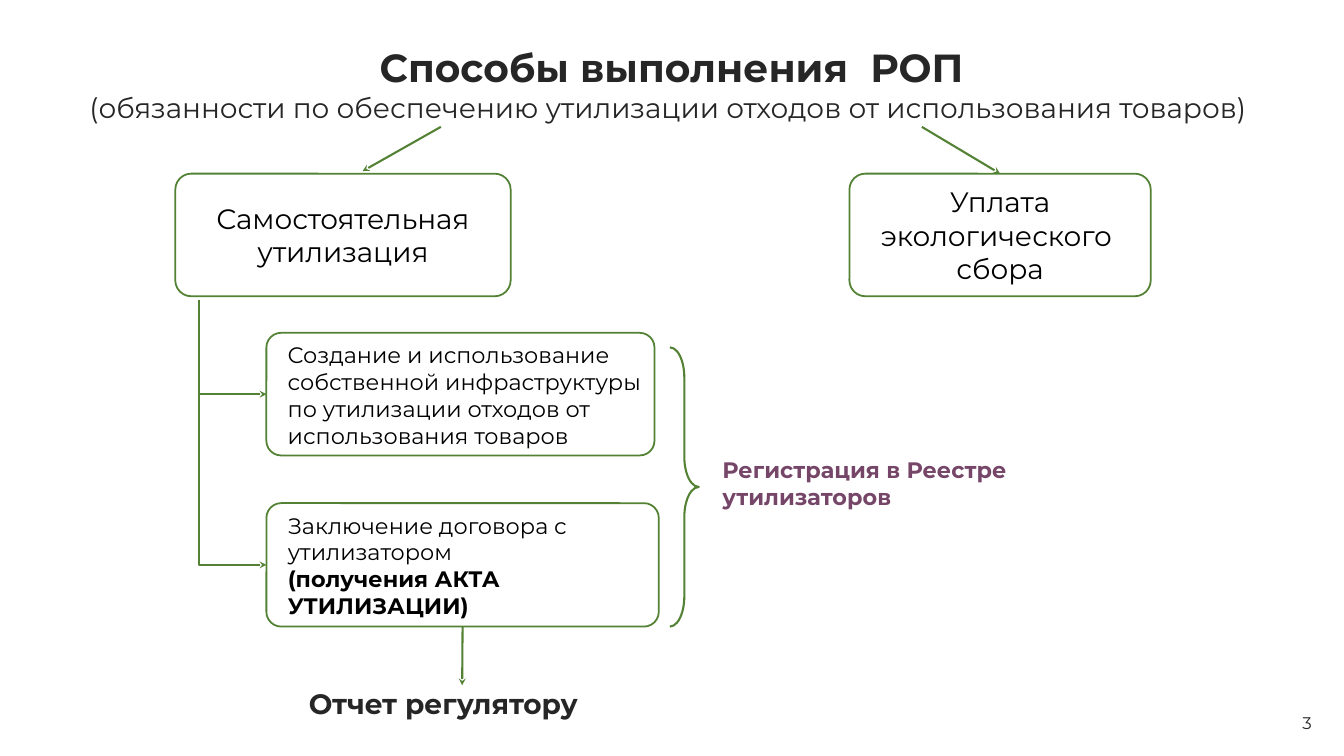
from lxml import etree
from pptx import Presentation
from pptx.dml.color import RGBColor
from pptx.enum.shapes import MSO_CONNECTOR, MSO_SHAPE
from pptx.enum.text import MSO_ANCHOR, MSO_AUTO_SIZE, PP_ALIGN
from pptx.oxml.ns import qn
from pptx.util import Inches, Pt

STRAIGHT, ELBOW = MSO_CONNECTOR.STRAIGHT, MSO_CONNECTOR.ELBOW
ROUND_RECT, BRACE = MSO_SHAPE.ROUNDED_RECTANGLE, MSO_SHAPE.RIGHT_BRACE
TOP, MIDDLE = MSO_ANCHOR.TOP, MSO_ANCHOR.MIDDLE
LEFT, CENTER, RIGHT = PP_ALIGN.LEFT, PP_ALIGN.CENTER, PP_ALIGN.RIGHT

FONT = "Montserrat"
COLORS = {"green": "548235", "dark": "262626", "black": "000000", "plum": "754668"}
LARGE, MEDIUM, SMALL = 23.7, 18.9, 14.2

# Each paragraph is (text, bold)
TITLE = "Способы выполнения  РОП"
SUBTITLE = "(обязанности по обеспечению утилизации отходов от использования товаров) "
WAYS = {
    "self": ((2.06, 2.04, 3.94, 1.44), [("Самостоятельная утилизация", False)]),
    "fee": ((9.98, 2.04, 3.54, 1.44), [("Уплата экологического \vсбора", False)]),
}
OPTIONS = {
    "own": ((3.13, 3.91, 4.56, 1.44), [
        ("Создание и использование собственной инфраструктуры\v"
         "по утилизации отходов от использования товаров", False)]),
    "contract": ((3.13, 5.91, 4.61, 1.45), [
        ("Заключение договора с утилизатором", False),
        ("(получения АКТА УТИЛИЗАЦИИ)", True)]),
}
LABELS = [
    ((8.39, 5.31, 3.54, 0.74), "Регистрация в Реестре утилизаторов", MEDIUM, "plum"),
    ((3.53, 8.01, 3.82, 0.5), "Отчет регулятору", LARGE, "dark"),
]
TRUNK_X, TRUNK_TOP = 2.34, 3.52


def color(name):
    return RGBColor.from_string(COLORS[name])


def format_run(r, size, name, bold=False):
    r.font.name, r.font.size, r.font.bold = FONT, Pt(size), bold
    r.font.color.rgb = color(name)


def write(sp, paragraphs, size, name, align=LEFT, anchor=TOP):
    tf = sp.text_frame
    tf.word_wrap, tf.vertical_anchor = True, anchor
    tf.text = "\n".join(text for text, _ in paragraphs)
    for p, (_, bold) in zip(tf.paragraphs, paragraphs):
        p.alignment = align
        for r in p.runs:
            format_run(r, size, name, bold)
    return tf


def add_outline(kind, box, width):
    sp = shapes.add_shape(kind, *map(Inches, box))
    sp.shadow.inherit = False
    sp.fill.background()
    sp.line.color.rgb, sp.line.width = color("green"), Pt(width)
    return sp


def add_arrow(kind, x1, y1, x2, y2):
    c = shapes.add_connector(kind, *map(Inches, (x1, y1, x2, y2)))
    c.line.color.rgb, c.line.width = color("green"), Pt(1.75)
    etree.SubElement(c.line._get_or_add_ln(), qn("a:tailEnd"), type="stealth")
    etree.SubElement(c._element.spPr, qn("a:effectLst"))
    return c


def add_branch(x1, y1, x2, y2):
    """Arrow that runs down and then turns right."""
    down, across = y2 - y1, x2 - x1
    left, top = (x1 + x2 - down) / 2, (y1 + y2 - across) / 2
    c = add_arrow(ELBOW, left, top, left + down, top + across)
    xfrm = c._element.spPr.find(qn("a:xfrm"))
    xfrm.set("rot", str(270 * 60000))
    xfrm.set("flipH", "1")
    c._element.spPr.find(qn("a:prstGeom")).set("prst", "bentConnector2")


prs = Presentation()
prs.slide_width, prs.slide_height = Inches(15.79), Inches(8.88)
s = prs.slides.add_slide(prs.slide_layouts[5])
shapes = s.shapes

title = shapes.title
title.left, title.top, title.width, title.height = map(Inches, (0.83, 0.46, 14.12, 1.06))
tf = write(title, [(TITLE + "\v" + SUBTITLE, True)], LARGE, "dark", CENTER)
tf.auto_size = MSO_AUTO_SIZE.NONE
heading, subheading = tf.paragraphs[0].runs
heading.font.size, subheading.font.bold = Pt(33.1), False

boxes = {}
for key, (box, paragraphs) in WAYS.items():
    boxes[key] = sp = add_outline(ROUND_RECT, box, 1.5)
    sp.adjustments[0] = 0.13
    write(sp, paragraphs, LARGE, "black", CENTER, MIDDLE)

for key, (box, paragraphs) in OPTIONS.items():
    boxes[key] = sp = add_outline(ROUND_RECT, box, 1.5)
    sp.adjustments[0] = 0.12
    tf = write(sp, paragraphs, MEDIUM, "black")
    tf.margin_left, tf.margin_right, tf.margin_top = Inches(0.2), 0, Inches(0.05)
    left, top, _, height = box
    add_branch(TRUNK_X, TRUNK_TOP, left, top + height / 2)

add_arrow(STRAIGHT, 5.18, 1.49, 4.26, 2.01)
add_arrow(STRAIGHT, 10.83, 1.49, 11.75, 2.04).end_connect(boxes["fee"], 0)
add_arrow(STRAIGHT, 5.43, 7.36, 5.43, 8.05).begin_connect(boxes["contract"], 2)

brace = add_outline(BRACE, (7.87, 4.08, 0.34, 3.28), 1.75)
brace.adjustments[0], brace.adjustments[1] = 1.04, 0.5

for box, text, size, name in LABELS:
    write(shapes.add_textbox(*map(Inches, box)), [(text, True)], size, name)

number = shapes.add_textbox(*map(Inches, (12.04, 8.25, 3.47, 0.47)))
write(number, [("3", False)], SMALL, "dark", RIGHT, MIDDLE)

prs.save("out.pptx")
